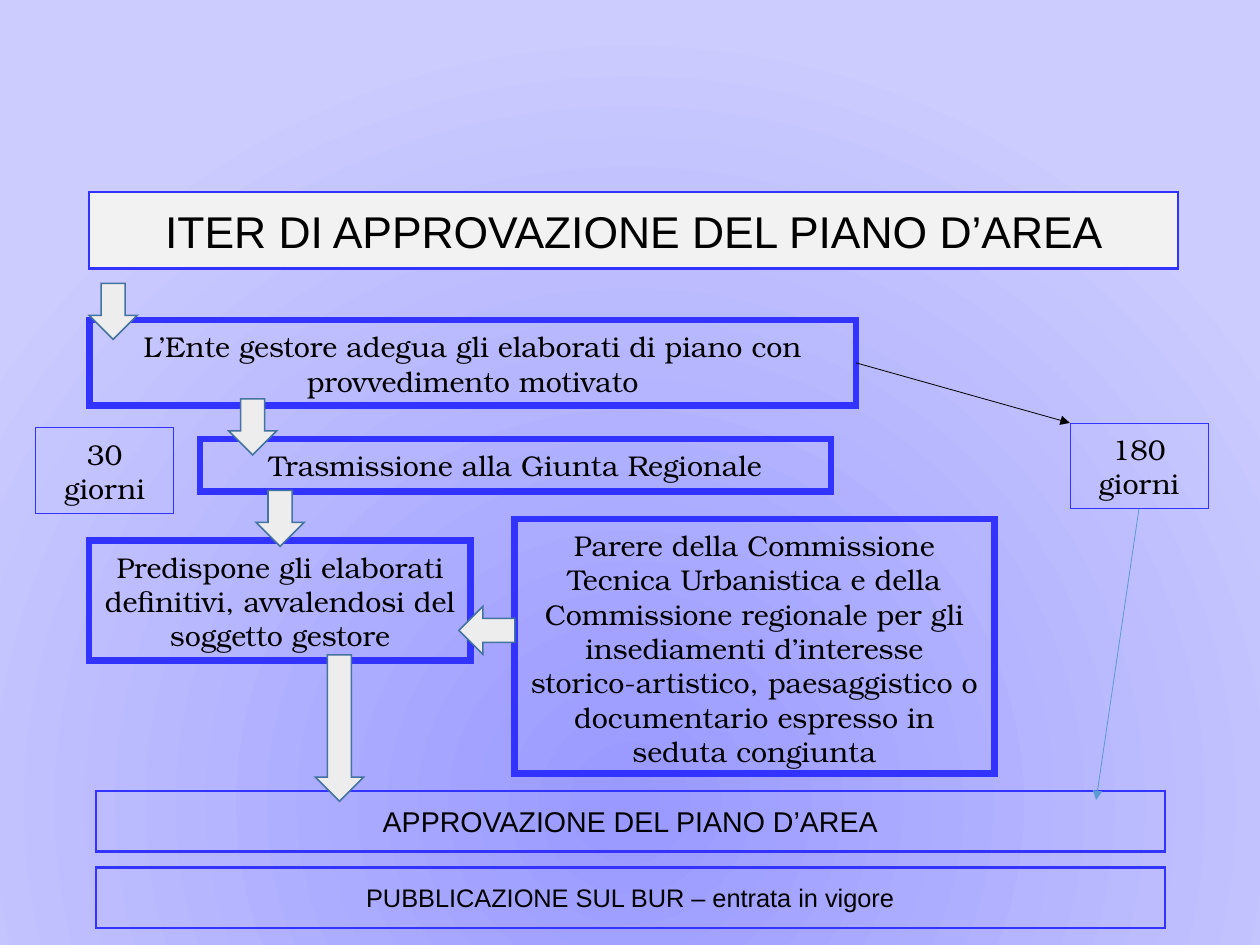
from lxml.etree import SubElement
from pptx import Presentation
from pptx.dml.color import RGBColor
from pptx.enum.shapes import MSO_CONNECTOR, MSO_SHAPE
from pptx.enum.text import MSO_ANCHOR, MSO_AUTO_SIZE, PP_ALIGN
from pptx.oxml import parse_xml
from pptx.oxml.ns import nsdecls, qn
from pptx.util import Inches, Pt

SIZE = (28 / 2.54, 21 / 2.54)
BLUE, BLACK = "3333FF", "000000"
SERIF, SANS = "TeX Gyre Bonum", "Arial"
TITLE = "ITER DI APPROVAZIONE DEL PIANO D’AREA"
STEPS = {
    "ente": ("L’Ente gestore adegua gli elaborati di piano con provvedimento motivato",
             (0.78, 2.8, 6.71, 0.75), 4.25),
    "giunta": ("Trasmissione alla Giunta Regionale", (1.75, 3.84, 5.52, 0.46), 4.25),
    "parere": ("Parere della Commissione Tecnica Urbanistica e della Commissione regionale "
               "per gli insediamenti d’interesse storico-artistico, paesaggistico o "
               "documentario espresso in seduta congiunta", (4.5, 4.54, 4.2, 2.23), 4.25),
    "limit": ("180 giorni", (9.36, 3.7, 1.21, 0.75), 0.25),
    "draft": ("Predispone gli elaborati definitivi, avvalendosi del soggetto gestore",
              (0.78, 4.73, 3.34, 1.05), 4.25),
    "term": ("30 giorni", (0.31, 3.74, 1.21, 0.75), 0.25),
}
FINALS = [("APPROVAZIONE DEL PIANO D’AREA", 18),
          ("PUBBLICAZIONE SUL BUR – entrata in vigore", 16)]
ARROWS = [(0.78, 2.48, 0.49, 0), (2, 3.49, 0.49, 0), (2.24, 4.29, 0.49, 0),
          (4.05, 5.27, 0.49, 90), (2.76, 5.73, 1.28, 0)]
LINKS = [("ente", 3, (9.36, 3.7), BLACK), ("limit", 2, (9.59, 7), "5B9BD5")]
GRAD = [(0, "9999FF"), (100000, "CCCCFF")]


def color(code):
    return RGBColor.from_string(code)


def paint(shape, fill, line, width):
    if fill:
        shape.fill.solid()
        shape.fill.fore_color.rgb = color(fill)
    else:
        shape.fill.background()
    shape.line.color.rgb = color(line)
    shape.line.width = Pt(width)
    SubElement(shape.line._get_or_add_ln(), qn("a:miter"), lim="800000")


def write(shape, text, font, size, pad, anchor):
    frame = shape.text_frame
    frame.word_wrap = True
    frame.auto_size = MSO_AUTO_SIZE.NONE
    frame.vertical_anchor = anchor
    frame.margin_left = frame.margin_right = Inches(pad[0])
    frame.margin_top = frame.margin_bottom = Inches(pad[1])
    para = frame.paragraphs[0]
    para.alignment = PP_ALIGN.CENTER
    run = para.add_run()
    run.text = text
    run.font.name = font
    run.font.size = Pt(size)
    run.font.color.rgb = color(BLACK)


def add(slide, kind, place):
    shape = slide.shapes.add_shape(kind, *map(Inches, place))
    shape.shadow.inherit = False
    return shape


def backdrop(slide):
    slide.background.fill.gradient()
    old = slide.element.find(".//" + qn("a:gradFill"))
    stops = "".join(f'<a:gs pos="{pos}"><a:srgbClr val="{code}"/></a:gs>'
                    for pos, code in GRAD)
    new = parse_xml(f'<a:gradFill {nsdecls("a")} rotWithShape="1"><a:gsLst>{stops}</a:gsLst>'
                    '<a:path path="circle"><a:fillToRect l="50000" t="85000" r="50000" '
                    'b="15000"/></a:path></a:gradFill>')
    old.getparent().replace(old, new)


def main():
    deck = Presentation()
    deck.slide_width, deck.slide_height = map(Inches, SIZE)
    slide = deck.slides.add_slide(deck.slide_layouts[5])
    backdrop(slide)

    title = slide.shapes.title
    title.left, title.top, title.width, title.height = map(Inches, (0.78, 1.68, 9.53, 0.67))
    paint(title, "F2F2F2", BLUE, 1.42)
    write(title, TITLE, SANS, 28, (0.01, 0.01), MSO_ANCHOR.MIDDLE)

    boxes = {}
    for name, (text, place, width) in STEPS.items():
        box = boxes[name] = add(slide, MSO_SHAPE.RECTANGLE, place)
        paint(box, None, BLUE, width)
        write(box, text, SERIF, 18, (0.13, 0.08), MSO_ANCHOR.TOP)

    for row, (text, size) in enumerate(FINALS):
        bar = add(slide, MSO_SHAPE.RECTANGLE, (0.84, 6.92 + 0.67 * row, 9.35, 0.53))
        paint(bar, None, BLUE, 1.42)
        write(bar, text, SANS, size, (0.01, 0.01), MSO_ANCHOR.MIDDLE)

    for left, top, height, turn in ARROWS:
        arrow = add(slide, MSO_SHAPE.DOWN_ARROW, (left, top, 0.42, height))
        arrow.rotation = turn
        paint(arrow, "EDEDED", "43739E", 1)

    for name, side, end, code in LINKS:
        x, y = map(Inches, end)
        link = slide.shapes.add_connector(MSO_CONNECTOR.STRAIGHT, x, y, x, y)
        link.begin_connect(boxes[name], side)
        link.line.color.rgb = color(code)
        link.line.width = Pt(0.5)
        SubElement(link.line._get_or_add_ln(), qn("a:tailEnd"), type="triangle")
        SubElement(link._element.spPr, qn("a:effectLst"))

    deck.save("out.pptx")


if __name__ == "__main__":
    main()
